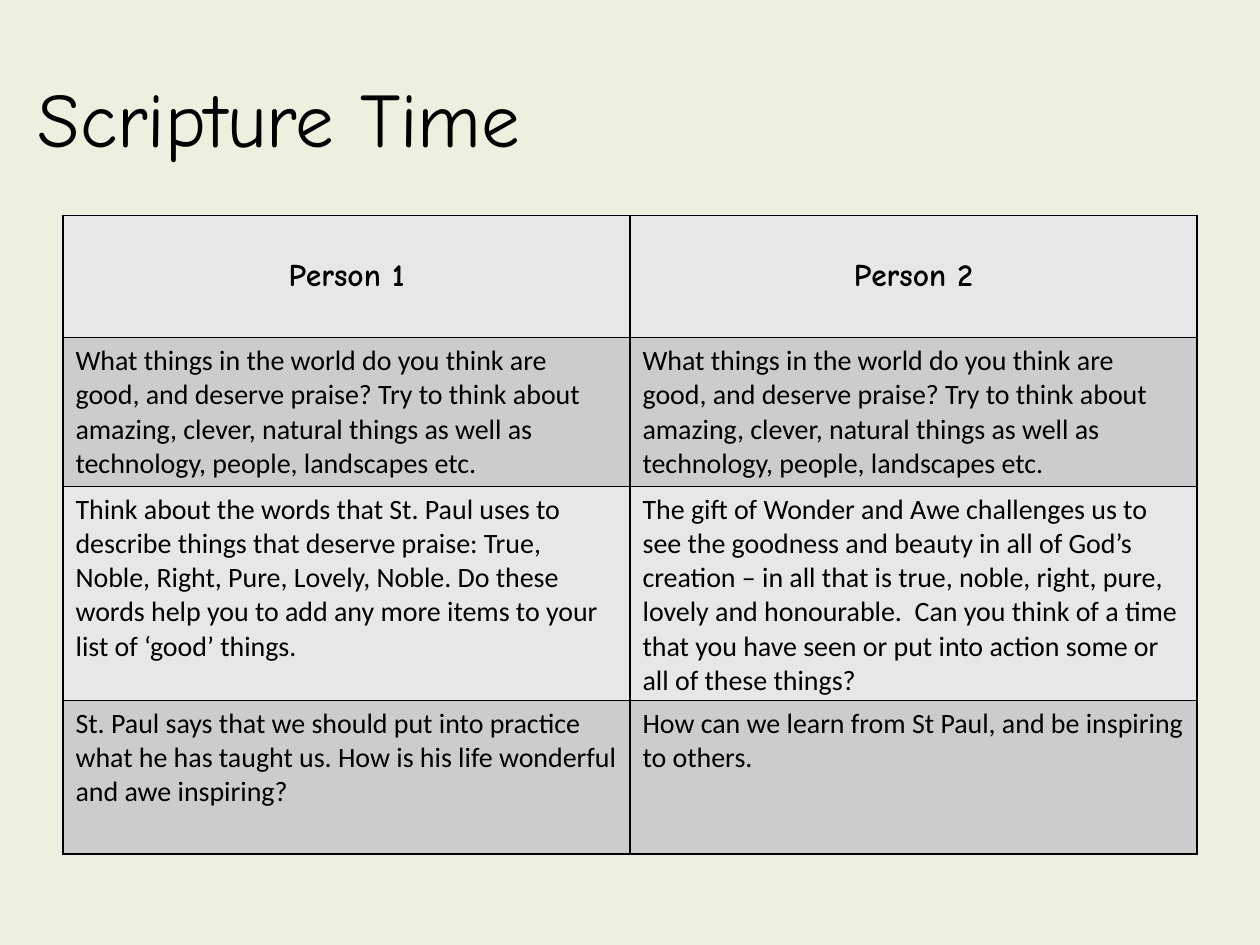
from dataclasses import dataclass

from lxml.etree import SubElement
from pptx import Presentation
from pptx.dml.color import RGBColor
from pptx.enum.text import MSO_ANCHOR, PP_ALIGN
from pptx.oxml.ns import qn
from pptx.util import Inches, Pt


@dataclass(frozen=True)
class Theme:
    background: str = "EBF1DE"
    ink: str = "000000"
    light_row: str = "E7E7E7"
    dark_row: str = "CCCCCC"
    display_font: str = "Comic Neue"
    body_font: str = "Calibri"
    title_size: int = 44
    header_size: int = 18
    body_size: int = 16
    border_width: int = 1


THEME = Theme()

PRAISE_QUESTION = (
    "What things in the world do you think are good, and deserve praise? "
    "Try to think about amazing, clever, natural things as well as "
    "technology, people, landscapes etc."
)
HEADINGS = ("Person 1", "Person 2")
QUESTIONS = (
    (PRAISE_QUESTION, PRAISE_QUESTION),
    (
        "Think about the words that St. Paul uses to describe things that "
        "deserve praise: True, Noble, Right, Pure, Lovely, Noble. Do these "
        "words help you to add any more items to your list of ‘good’ things.",
        "The gift of Wonder and Awe challenges us to see the goodness and "
        "beauty in all of God’s creation – in all that is true, noble, right, "
        "pure, lovely and honourable.  Can you think of a time that you have "
        "seen or put into action some or all of these things?",
    ),
    (
        "St. Paul says that we should put into practice what he has taught us. "
        "How is his life wonderful and awe inspiring?",
        "How can we learn from St Paul, and be inspiring to others.",
    ),
)
ROW_HEIGHTS = (0.97, 1.18, 1.45, 1.22)
COLUMN_WIDTH = 4.5


def write_text(frame, text, *, font, size, bold=False, align=PP_ALIGN.LEFT):
    frame.word_wrap = True
    paragraph = frame.paragraphs[0]
    paragraph.alignment = align
    run = paragraph.add_run()
    run.text = text
    run.font.name = font
    run.font.size = Pt(size)
    run.font.bold = bold
    run.font.color.rgb = RGBColor.from_string(THEME.ink)


def add_title(slide, text):
    title = slide.shapes.add_textbox(
        Inches(0.2), Inches(0.3), Inches(9.3), Inches(1.25)
    )
    title.text_frame.vertical_anchor = MSO_ANCHOR.MIDDLE
    write_text(
        title.text_frame, text, font=THEME.display_font, size=THEME.title_size
    )


def outline_cell(cell):
    properties = cell._tc.get_or_add_tcPr()
    for side in ("lnL", "lnR", "lnT", "lnB"):
        border = SubElement(
            properties, qn(f"a:{side}"), w=str(Pt(THEME.border_width))
        )
        fill = SubElement(border, qn("a:solidFill"))
        SubElement(fill, qn("a:srgbClr"), val=THEME.ink)


def style_cell(cell, color):
    outline_cell(cell)
    cell.fill.solid()
    cell.fill.fore_color.rgb = RGBColor.from_string(color)


def add_question_table(slide):
    rows = (HEADINGS, *QUESTIONS)
    questions = slide.shapes.add_table(
        len(rows), len(HEADINGS), Inches(0.5), Inches(1.71),
        Inches(COLUMN_WIDTH * len(HEADINGS)), Inches(sum(ROW_HEIGHTS)),
    ).table
    for column in questions.columns:
        column.width = Inches(COLUMN_WIDTH)
    for index, (texts, height) in enumerate(zip(rows, ROW_HEIGHTS)):
        questions.rows[index].height = Inches(height)
        color = THEME.dark_row if index % 2 else THEME.light_row
        for person, text in enumerate(texts):
            cell = questions.cell(index, person)
            style_cell(cell, color)
            if index == 0:
                cell.vertical_anchor = MSO_ANCHOR.MIDDLE
                write_text(
                    cell.text_frame, text, font=THEME.display_font,
                    size=THEME.header_size, bold=True, align=PP_ALIGN.CENTER,
                )
            else:
                write_text(
                    cell.text_frame, text, font=THEME.body_font,
                    size=THEME.body_size,
                )


def main():
    deck = Presentation()
    deck.slide_width = Inches(10)
    deck.slide_height = Inches(7.5)
    slide = deck.slides.add_slide(deck.slide_layouts[6])
    slide.background.fill.solid()
    slide.background.fill.fore_color.rgb = RGBColor.from_string(THEME.background)
    add_title(slide, "Scripture Time")
    add_question_table(slide)
    deck.save("out.pptx")


if __name__ == "__main__":
    main()
